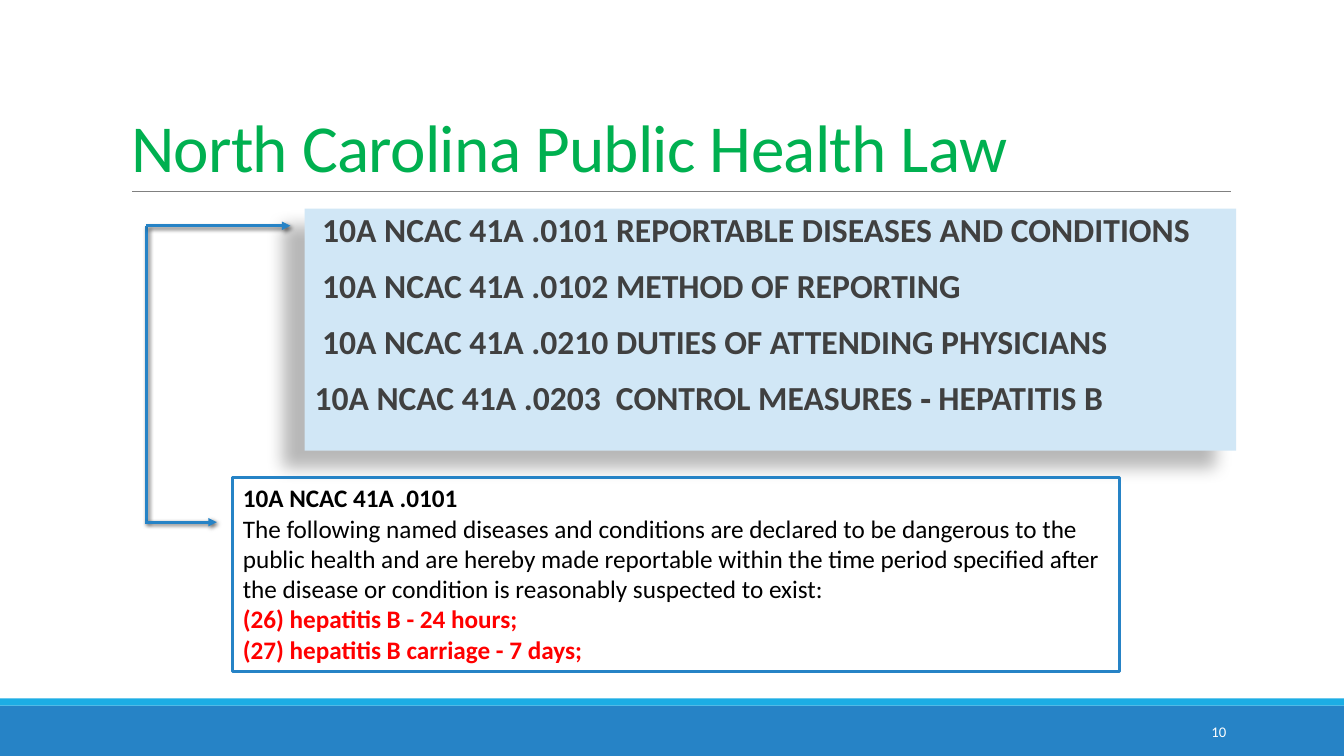
from lxml.etree import SubElement
from pptx import Presentation
from pptx.dml.color import RGBColor
from pptx.enum.shapes import MSO_CONNECTOR, MSO_SHAPE
from pptx.enum.text import MSO_ANCHOR, MSO_AUTO_SIZE, PP_ALIGN
from pptx.oxml.ns import qn
from pptx.util import Inches, Pt

THEME = {
    "colors": {name: RGBColor.from_string(value) for name, value in {
        "blue": "2683C6", "cyan": "1CADE4", "pale": "D1E7F6", "green": "00B050",
        "gray": "808080", "dark": "404040", "black": "000000", "red": "FF0000",
        "white": "FFFFFF"}.items()},
    "sizes": {"title": Pt(48), "rule": Pt(24), "detail": Pt(18), "number": Pt(10.5)},
    "font": "Calibri",
}
COLORS = THEME["colors"]


def write_paragraphs(shape, lines, size, frame_format, paragraph_format):
    frame = shape.text_frame
    for name, value in frame_format.items():
        setattr(frame, name, value)
    frame.text = "\n".join(text for text, color, bold in lines)
    for paragraph, (text, color, bold) in zip(frame.paragraphs, lines):
        for name, value in paragraph_format.items():
            setattr(paragraph, name, value)
        font = paragraph.runs[0].font
        for name, value in {"name": THEME["font"], "size": THEME["sizes"][size], "bold": bold}.items():
            setattr(font, name, value)
        font.color.rgb = COLORS[color]


def add_effects(shape, blur=0, distance=0, angle=0, opacity=0):
    effects = SubElement(shape._element.spPr, qn("a:effectLst"))
    if opacity:
        shadow = SubElement(effects, qn("a:outerShdw"), blurRad=str(Pt(blur)),
                            dist=str(Pt(distance)), dir=str(angle * 60000), rotWithShape="0")
        color = SubElement(shadow, qn("a:srgbClr"), val=str(COLORS["black"]))
        SubElement(color, qn("a:alpha"), val=str(opacity * 1000))


presentation = Presentation()
presentation.slide_width = Inches(13.33)
presentation.slide_height = Inches(7.5)
slide = presentation.slides.add_slide(presentation.slide_layouts[1])
shapes = slide.shapes
title, rules = slide.placeholders

for top, height, color in [(7, 0.5, "blue"), (6.93, 0.07, "cyan")]:
    band = shapes.add_shape(MSO_SHAPE.RECTANGLE, 0, Inches(top), presentation.slide_width, Inches(height))
    band.fill.solid()
    band.fill.fore_color.rgb = COLORS[color]
    band.line.fill.background()
    band.shadow.inherit = False

for placeholder, box in [(title, (1.2, 0.31, 11, 1.59)), (rules, (3.02, 2.07, 9.24, 2.4))]:
    for name, value in zip(("left", "top", "width", "height"), box):
        setattr(placeholder, name, Inches(value))

write_paragraphs(
    title, [("North Carolina Public Health Law", "green", False)], "title",
    {"vertical_anchor": MSO_ANCHOR.BOTTOM, "auto_size": MSO_AUTO_SIZE.NONE, "word_wrap": True},
    {"alignment": PP_ALIGN.LEFT, "line_spacing": 0.85})
title.text_frame.paragraphs[0].runs[0].font._element.set("spc", "-50")

rules.fill.solid()
rules.fill.fore_color.rgb = COLORS["pale"]
add_effects(rules, blur=11.8, distance=19.7, angle=141, opacity=28)
rule_lines = [
    " 10A NCAC 41A .0101 REPORTABLE DISEASES AND CONDITIONS",
    " 10A NCAC 41A .0102 METHOD OF REPORTING",
    " 10A NCAC 41A .0210 DUTIES OF ATTENDING PHYSICIANS",
    "10A NCAC 41A .0203  CONTROL MEASURES ‑ HEPATITIS B",
]
write_paragraphs(
    rules, [(text, "dark", True) for text in rule_lines], "rule",
    {"margin_left": 0, "margin_right": 0, "vertical_anchor": MSO_ANCHOR.TOP,
     "auto_size": MSO_AUTO_SIZE.NONE, "word_wrap": True},
    {"line_spacing": 0.9, "space_before": Pt(12), "space_after": Pt(2)})
for paragraph in rules.text_frame.paragraphs:
    properties = paragraph._p.get_or_add_pPr()
    properties.set("marL", str(Inches(0.1)))
    properties.set("indent", str(Inches(-0.1)))
    bullet_color = SubElement(properties, qn("a:buClr"))
    SubElement(bullet_color, qn("a:srgbClr"), val=str(COLORS["cyan"]))
    SubElement(properties, qn("a:buFont"), typeface=THEME["font"])
    SubElement(properties, qn("a:buChar"), char=" ")

number = shapes.add_textbox(Inches(10.83), Inches(7.06), Inches(1.43), Inches(0.4))
write_paragraphs(
    number, [("10", "white", False)], "number",
    {"vertical_anchor": MSO_ANCHOR.MIDDLE, "word_wrap": True}, {"alignment": PP_ALIGN.RIGHT})

detail = shapes.add_shape(MSO_SHAPE.RECTANGLE, Inches(2.31), Inches(4.74), Inches(8.79), Inches(1.92))
detail.fill.background()
detail.line.color.rgb = COLORS["blue"]
detail.line.width = Pt(2.25)
detail.shadow.inherit = False
write_paragraphs(
    detail,
    [("10A NCAC 41A .0101", "black", True),
     ("The following named diseases and conditions are declared to be dangerous to the public health "
      "and are hereby made reportable within the time period specified after the disease or condition "
      "is reasonably suspected to exist:", "black", False),
     ("(26) hepatitis B - 24 hours;", "red", True),
     ("(27) hepatitis B carriage - 7 days;", "red", True)],
    "detail",
    {"vertical_anchor": MSO_ANCHOR.TOP, "auto_size": MSO_AUTO_SIZE.SHAPE_TO_FIT_TEXT, "word_wrap": True},
    {"alignment": PP_ALIGN.LEFT})

bracket_shadow = {"blur": 3, "distance": 2, "angle": 45, "opacity": 60}
for ends, color, width, arrow, shadow in [
    ((1.31, 1.9, 12.21, 1.9), "gray", 0.5, False, {}),
    ((1.45, 2.24, 1.45, 5.18), "blue", 2, False, bracket_shadow),
    ((1.44, 5.18, 2.15, 5.18), "blue", 2, True, bracket_shadow),
    ((1.45, 2.24, 2.88, 2.24), "blue", 2, True, bracket_shadow),
]:
    connector = shapes.add_connector(MSO_CONNECTOR.STRAIGHT, *map(Inches, ends))
    connector.line.color.rgb = COLORS[color]
    connector.line.width = Pt(width)
    if arrow:
        SubElement(connector.line._get_or_add_ln(), qn("a:tailEnd"), type="triangle")
    add_effects(connector, **shadow)

presentation.save("out.pptx")
